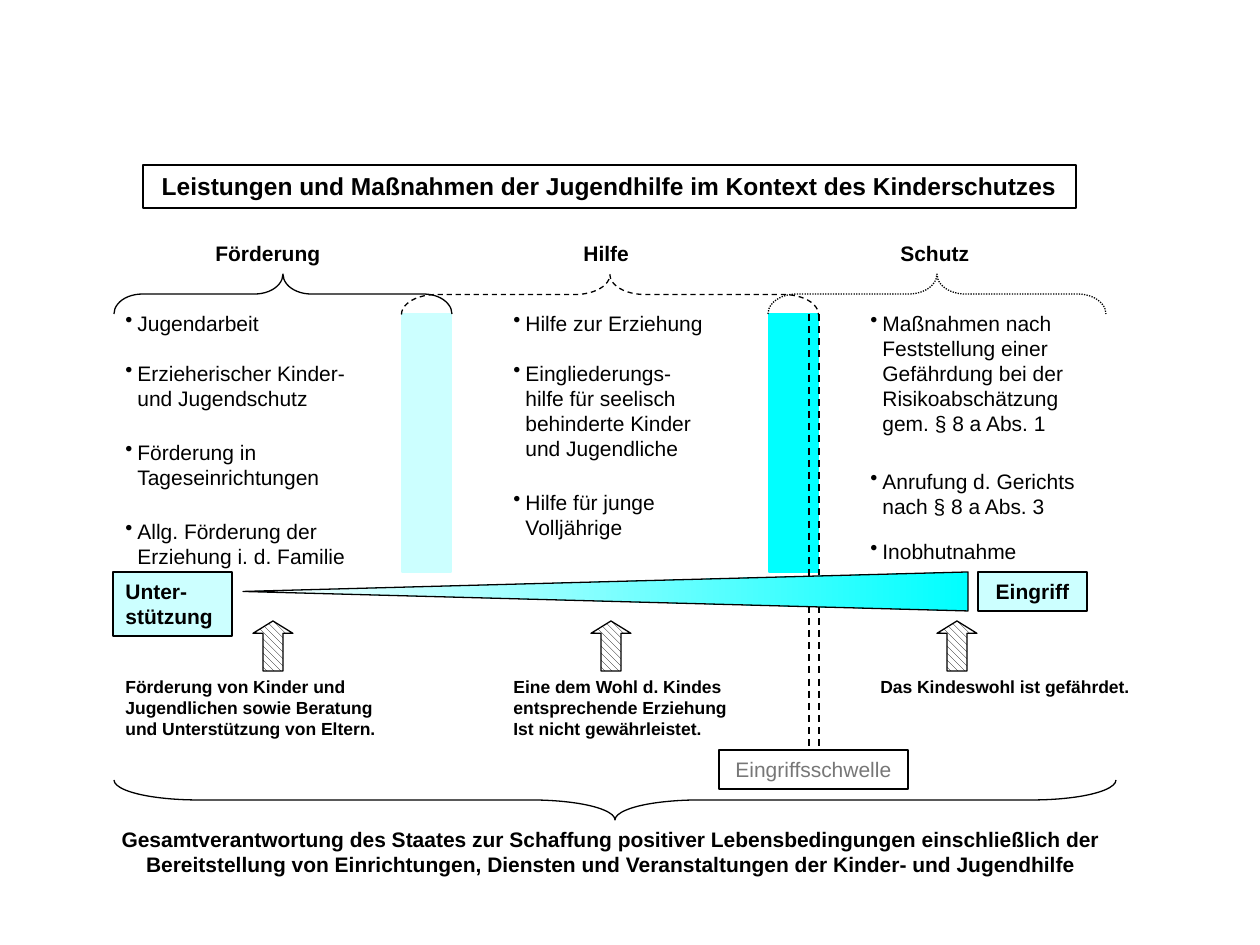
from lxml import etree
from pptx import Presentation, util as u
from pptx.dml.color import RGBColor
from pptx.enum import dml, shapes, text
from pptx.oxml.ns import qn

INK = {"black": "000000", "white": "FFFFFF", "pale": "CCFFFF",
       "cyan": "00FFFF", "grey": "777777"}
RGB = {k: RGBColor.from_string(v) for k, v in INK.items()}
KIND = shapes.MSO_SHAPE
DASH = dml.MSO_LINE


def px(*nums):
    return [u.Emu(n * 914400 // 126) for n in nums]


def write(shape, words, size=12, bold=False, color="black", mid=False, dot=False):
    frame = shape.text_frame
    frame.text = words
    frame.word_wrap = True
    frame.auto_size = text.MSO_AUTO_SIZE.NONE
    frame.vertical_anchor = text.MSO_ANCHOR.TOP
    if not mid:
        frame.margin_right = 0
    for i, para in enumerate(frame.paragraphs):
        para.alignment = text.PP_ALIGN.CENTER if mid else text.PP_ALIGN.LEFT
        if dot:
            props = para._p.get_or_add_pPr()
            props.set("marL", str(px(12)[0]))
            props.set("indent", str(px(0 if i else -12)[0]))
            if i == 0:
                etree.SubElement(props, qn("a:buChar")).set("char", "•")
        for run in para.runs:
            font = run.font
            font.name, font.size, font.bold = "Arial", u.Pt(size), bold
            font.color.rgb = RGB[color]


deck = Presentation()
deck.slide_width, deck.slide_height = u.Inches(10), u.Inches(7.5)
slide = deck.slides.add_slide(deck.slide_layouts[5])
tree = slide.shapes

title = tree.title
title.left, title.top, title.width, title.height = px(143, 165, 933, 43)
title.line.color.rgb = RGB["black"]
title.line.width = u.Pt(0.75)
write(title, "Leistungen und Maßnahmen der Jugendhilfe im Kontext des Kinderschutzes",
      14, True, mid=True)

foot = tree.add_textbox(*px(105, 820, 1012, 63))
write(foot, "Gesamtverantwortung des Staates zur Schaffung positiver Lebensbedingungen einschließlich der\n"
      "Bereitstellung von Einrichtungen, Diensten und Veranstaltungen der Kinder- und Jugendhilfe",
      bold=True, mid=True)

for x, w, words in [(203, 139, "Förderung"), (571, 79, "Hilfe"), (888, 100, "Schutz")]:
    write(tree.add_textbox(*px(x, 234, w, 38)), words, bold=True)

points = [
    (113, 304, 208, "Jugendarbeit"),
    (113, 354, 258, "Erzieherischer Kinder-\nund Jugendschutz"),
    (113, 433, 228, "Förderung in\nTageseinrichtungen"),
    (113, 512, 248, "Allg. Förderung der\nErziehung i. d. Familie"),
    (501, 304, 218, "Hilfe zur Erziehung"),
    (501, 354, 238, "Eingliederungs-\nhilfe für seelisch\nbehinderte Kinder\nund Jugendliche"),
    (501, 483, 169, "Hilfe für junge\nVolljährige"),
    (858, 304, 218, "Maßnahmen nach\nFeststellung einer\nGefährdung bei der\n"
                    "Risikoabschätzung\ngem. § 8 a Abs. 1"),
    (858, 462, 258, "Anrufung d. Gerichts\nnach § 8 a Abs. 3"),
    (858, 532, 208, "Inobhutnahme"),
]
for x, y, w, words in points:
    high = 13 + 25 * (words.count("\n") + 1)
    write(tree.add_textbox(*px(x, y, w, high)), words, dot=True)

notes = [
    (113, 297, "Förderung von Kinder und\nJugendlichen sowie Beratung\nund Unterstützung von Eltern."),
    (501, 248, "Eine dem Wohl d. Kindes\nentsprechende Erziehung\nIst nicht gewährleistet."),
    (868, 287, "Das Kindeswohl ist gefährdet."),
]
for x, w, words in notes:
    write(tree.add_textbox(*px(x, 670, w, 76)), words, 10, True)

for x, tone in [(402, "pale"), (769, "cyan")]:
    bar = tree.add_shape(KIND.RECTANGLE, *px(x, 314, 49, 258))
    bar.shadow.inherit = False
    bar.fill.solid()
    bar.fill.fore_color.rgb = bar.line.color.rgb = RGB[tone]
    bar.line.width = u.Pt(0.75)

braces = [(263, 125, 338, 270, 0.707, DASH.SOLID),
          (590, 86, 417, 270, 0.872, DASH.DASH),
          (917, 125, 338, 270, 0.707, DASH.ROUND_DOT),
          (595, 299, 1002, 90, 2.098, DASH.SOLID)]
for x, y, h, turn, bend, dash in braces:
    brace = tree.add_shape(KIND.RIGHT_BRACE, *px(x, y, 40, h))
    brace.shadow.inherit = False
    brace.rotation = turn
    brace.adjustments[0] = bend
    brace.fill.background()
    brace.line.color.rgb = RGB["black"]
    brace.line.width = u.Pt(0.75)
    brace.line.dash_style = dash

boxes = [(719, 750, 189, 39, None, "Eingriffsschwelle", False, "grey", True),
         (113, 572, 119, 64, "pale", "Unter-stützung", True, "black", False),
         (978, 572, 109, 39, "pale", "Eingriff", True, "black", True)]
for x, y, w, h, tone, words, bold, color, mid in boxes:
    box = tree.add_shape(KIND.RECTANGLE, *px(x, y, w, h))
    box.shadow.inherit = False
    if tone:
        box.fill.solid()
        box.fill.fore_color.rgb = RGB[tone]
    else:
        box.fill.background()
    box.line.color.rgb = RGB["black"]
    box.line.width = u.Pt(0.75)
    write(box, words, bold=bold, color=color, mid=mid)

for x in (253, 591, 937):
    arrow = tree.add_shape(KIND.UP_ARROW, *px(x, 621, 40, 50))
    arrow.shadow.inherit = False
    arrow.adjustments[0], arrow.adjustments[1] = 0.5, 0.31
    arrow.fill.patterned()
    arrow.fill.pattern = dml.MSO_PATTERN.WIDE_DOWNWARD_DIAGONAL
    arrow.fill.fore_color.rgb = RGB["black"]
    arrow.fill.back_color.rgb = RGB["white"]
    arrow.line.color.rgb = RGB["black"]
    arrow.line.width = u.Pt(0.75)

for x in (809, 819):
    edge = tree.add_connector(shapes.MSO_CONNECTOR.STRAIGHT, *px(x, 314, x, 750))
    edge.line.color.rgb = RGB["black"]
    edge.line.width = u.Pt(1)
    edge.line.dash_style = DASH.DASH
    etree.SubElement(edge._element.spPr, qn("a:effectLst"))

wedge = tree.add_shape(KIND.FLOWCHART_MERGE, *px(586, 229, 39, 725))
wedge.shadow.inherit = False
wedge.rotation = 90
wedge.fill.gradient()
wedge.fill.gradient_angle = 270
for stop, tone in zip(wedge.fill.gradient_stops, ("cyan", "white")):
    stop.color.rgb = RGB[tone]
wedge.line.color.rgb = RGB["black"]
wedge.line.width = u.Pt(0.75)

deck.save("out.pptx")
